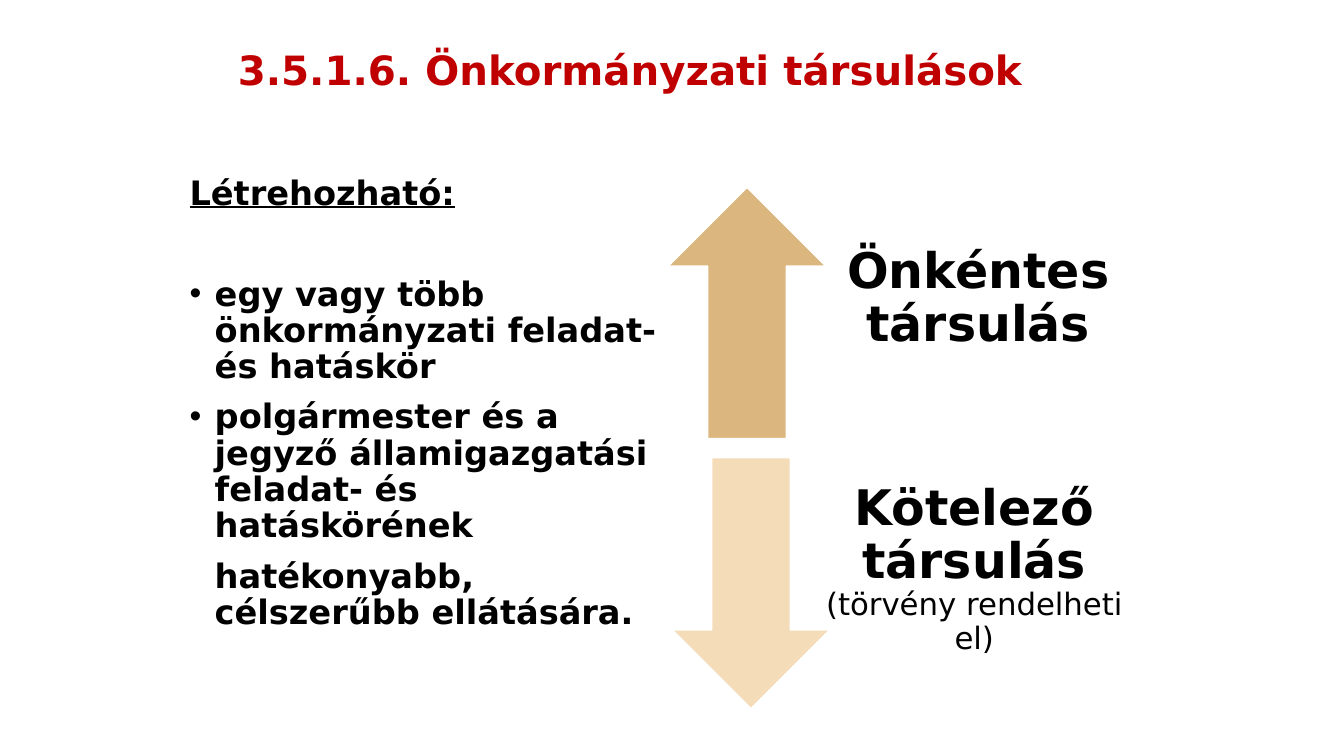
from lxml import etree
from pptx import Presentation
from pptx import util as u
from pptx.dml.color import RGBColor
from pptx.enum import shapes, text
from pptx.oxml import ns

COLORS = {"heading": "C00000", "ink": "000000", "voluntary": "DBB67E",
          "mandatory": "F5DCB9", "edge": "FFFFFF"}
FONT = "DejaVu Sans"

deck = Presentation()
deck.slide_width, deck.slide_height = u.Inches(13.33), u.Inches(7.5)
slide = deck.slides.add_slide(deck.slide_layouts[1])


def share(left, top, width, height):
    across, down = deck.slide_width / 100, deck.slide_height / 100
    return [int(n) for n in (left * across, top * down, width * across, height * down)]


def write(paragraph, words, size, color="ink", **extra):
    paragraph.line_spacing = 0.9
    paragraph.space_before = paragraph.space_after = u.Pt(0)
    run = paragraph.add_run()
    run.text = words
    run.font.color.rgb = RGBColor.from_string(COLORS[color])
    for key, value in {"name": FONT, "size": u.Pt(size), "bold": True, **extra}.items():
        setattr(run.font, key, value)


heading = slide.shapes.title
conditions = slide.placeholders[1]
for part, box, anchor in [
    (heading, (16.95, 5.33, 64.05, 8.4), text.MSO_ANCHOR.MIDDLE),
    (conditions, (13.35, 22.67, 37.8, 67.2), text.MSO_ANCHOR.TOP),
]:
    part.left, part.top, part.width, part.height = share(*box)
    part.text_frame.auto_size = text.MSO_AUTO_SIZE.NONE
    part.text_frame.vertical_anchor = anchor

title_line = heading.text_frame.paragraphs[0]
title_line.alignment = text.PP_ALIGN.LEFT
write(title_line, "3.5.1.6. Önkormányzati társulások", 28.8, "heading")

INDENT = u.Inches(0.25)
for index, (words, bullet, margin, hanging, before, underline) in enumerate([
    ("Létrehozható:", None, INDENT, -INDENT, 0, True),
    ("egy vagy több önkormányzati feladat- és hatáskör", "•", INDENT, -INDENT, 46, False),
    ("polgármester és a jegyző államigazgatási feladat- és hatáskörének",
     "•", INDENT, -INDENT, 10, False),
    ("hatékonyabb, célszerűbb ellátására.", None, INDENT, 0, 10, False),
]):
    frame = conditions.text_frame
    condition = frame.add_paragraph() if index else frame.paragraphs[0]
    write(condition, words, 24, underline=underline)
    condition.space_before = u.Pt(before)
    props = condition._p.get_or_add_pPr()
    props.set("marL", str(margin))
    props.set("indent", str(hanging))
    if bullet:
        etree.SubElement(props, ns.qn("a:buFont")).set("typeface", "Arial")
        etree.SubElement(props, ns.qn("a:buChar")).set("char", bullet)
    else:
        etree.SubElement(props, ns.qn("a:buNone"))

ARROW_WIDTH, BAND_HEIGHT = 11.7, 33.2
for direction, color, top, arrow_left, label_left, label_width, lines in [
    (shapes.MSO_SHAPE.UP_ARROW, "voluntary", 24.8, 49.73, 60.9, 23.78,
     [("Önkéntes társulás", 35, True)]),
    (shapes.MSO_SHAPE.DOWN_ARROW, "mandatory", 60.53, 50.03, 59.18, 26.63,
     [("Kötelező társulás", 35, True), ("(törvény rendelheti el)", 22, False)]),
]:
    arrow = slide.shapes.add_shape(
        direction, *share(arrow_left, top, ARROW_WIDTH, BAND_HEIGHT))
    arrow.shadow.inherit = False
    arrow.fill.solid()
    arrow.fill.fore_color.rgb = RGBColor.from_string(COLORS[color])
    arrow.line.color.rgb = RGBColor.from_string(COLORS["edge"])
    arrow.line.width = u.Pt(1)

    label = slide.shapes.add_textbox(
        *share(label_left, top, label_width, BAND_HEIGHT)).text_frame
    inset = u.Inches(0.27)
    for key, value in {"word_wrap": True, "vertical_anchor": text.MSO_ANCHOR.MIDDLE,
                       "margin_left": inset, "margin_top": 0,
                       "margin_right": inset, "margin_bottom": inset}.items():
        setattr(label, key, value)
    for index, (words, size, bold) in enumerate(lines):
        line = label.add_paragraph() if index else label.paragraphs[0]
        line.alignment = text.PP_ALIGN.CENTER
        write(line, words, size, bold=bold)

deck.save("out.pptx")
